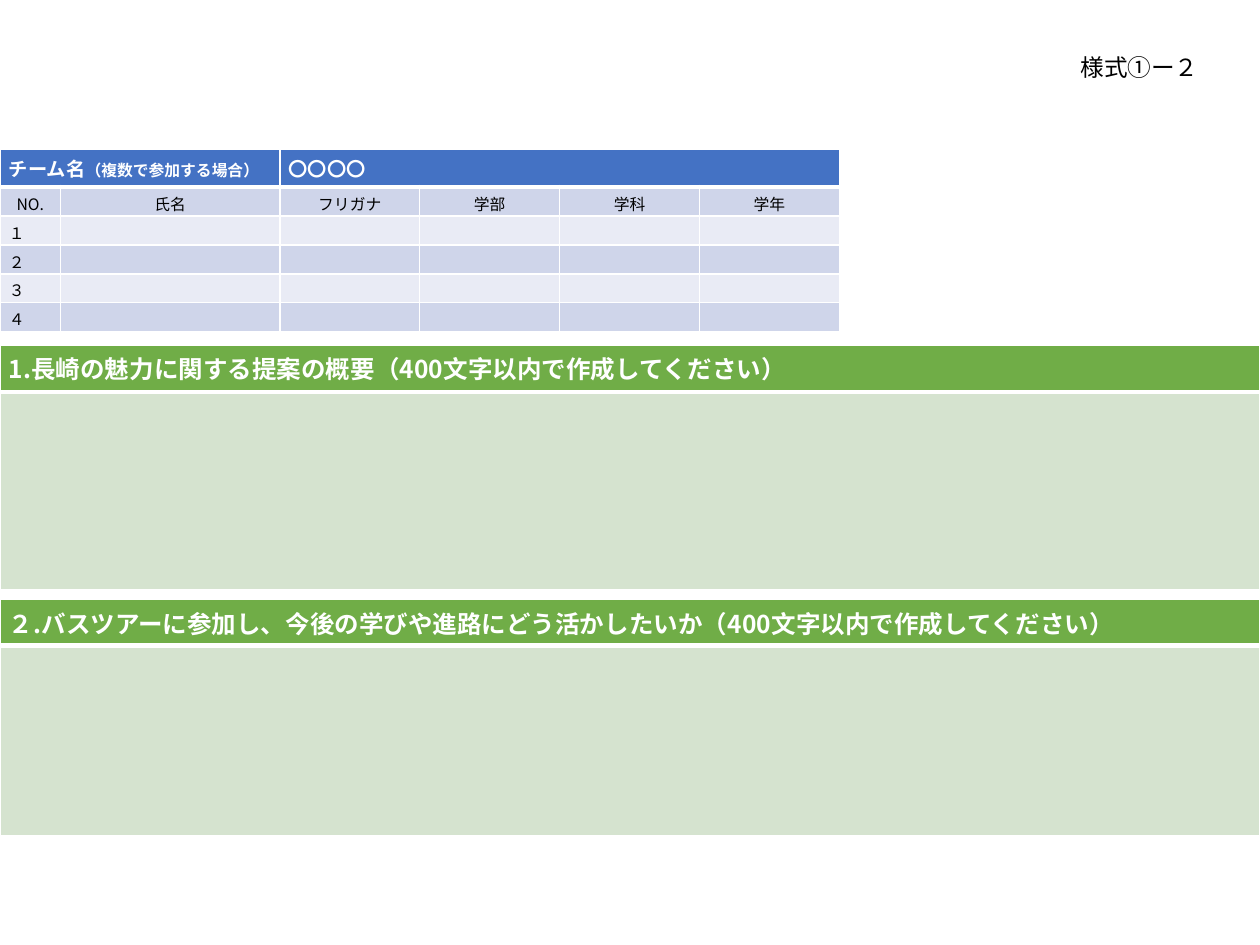
"""Build the team entry form slide with a member table and two answer tables."""
from pptx import Presentation
from pptx.dml.color import RGBColor
from pptx.enum.text import PP_ALIGN
from pptx.oxml.ns import qn
from pptx.util import Cm, Pt
from lxml.etree import SubElement

FONT = "Noto Sans CJK JP"
BLUE, BAND, LIGHT = "4472C4", "CFD5EA", "E9EBF5"
GREEN, PALE = "70AD47", "D5E3CF"


def write(p, text, size, color="000000", bold=False):
    """Add a formatted run to a paragraph."""
    r = p.add_run()
    r.text = text
    r.font.size = Pt(size)
    r.font.bold = bold
    r.font.name = FONT
    r.font.color.rgb = RGBColor.from_string(color)
    SubElement(r.font._element, qn("a:ea"), typeface=FONT)


def style_cell(cell, fill, bottom=1):
    """Set margins, white borders and fill, and return the first paragraph."""
    cell.margin_left = cell.margin_right = Cm(0.18)
    cell.margin_top = cell.margin_bottom = Cm(0.1)
    tcPr = cell._tc.get_or_add_tcPr()
    for side, width in (("L", 1), ("R", 1), ("T", 1), ("B", bottom)):
        ln = SubElement(tcPr, qn("a:ln" + side), w=str(Pt(width)))
        SubElement(SubElement(ln, qn("a:solidFill")), qn("a:srgbClr"), val="FFFFFF")
    cell.fill.solid()
    cell.fill.fore_color.rgb = RGBColor.from_string(fill)
    p = cell.text_frame.paragraphs[0]
    if not cell.is_spanned:
        SubElement(p._p, qn("a:endParaRPr"), sz="900")
    return p


prs = Presentation()
prs.slide_width, prs.slide_height = Cm(25.4), Cm(19.05)
s = prs.slides.add_slide(prs.slide_layouts[6])

sections = [
    (6.96, 0.94, 3.99, "1.長崎の魅力に関する提案の概要（400文字以内で作成してください）"),
    (12.09, 0.77, 3.84, "２.バスツアーに参加し、今後の学びや進路にどう活かしたいか（400文字以内で作成してください）"),
]
for top, head, body, heading in sections:
    tbl = s.shapes.add_table(2, 1, 0, Cm(top), Cm(25.4), Cm(head + body)).table
    tbl.rows[0].height, tbl.rows[1].height = Cm(head), Cm(body)
    write(style_cell(tbl.cell(0, 0), GREEN, 3), heading, 14, "FFFFFF", True)
    style_cell(tbl.cell(1, 0), PALE)

tf = s.shapes.add_textbox(Cm(21.54), Cm(0.94), Cm(3.3), Cm(0.84)).text_frame
tf.word_wrap = True
write(tf.paragraphs[0], "様式①ー２", 13.5)

widths = [1.22, 4.42] + [2.82] * 4
heights = [0.77] + [0.58] * 5
tbl = s.shapes.add_table(6, 6, 0, Cm(3), Cm(sum(widths)), Cm(sum(heights))).table
for col, width in zip(tbl.columns, widths):
    col.width = Cm(width)
for row, height in zip(tbl.rows, heights):
    row.height = Cm(height)
tbl.cell(0, 0).merge(tbl.cell(0, 1))
tbl.cell(0, 2).merge(tbl.cell(0, 5))

team = [style_cell(cell, BLUE, 3) for cell in tbl.rows[0].cells]
write(team[0], "チーム名", 11, "FFFFFF", True)
write(team[0], "（複数で参加する場合）", 9, "FFFFFF", True)
write(team[2], "〇〇〇〇", 11, "FFFFFF", True)

labels = ["NO.", "氏名", "フリガナ", "学部", "学科", "学年"]
for c, label in enumerate(labels):
    p = style_cell(tbl.cell(1, c), BAND)
    p.alignment = PP_ALIGN.CENTER
    write(p, label, 9)
for i, number in enumerate("１２３４", 2):
    cells = [style_cell(cell, BAND if i % 2 else LIGHT) for cell in tbl.rows[i].cells]
    write(cells[0], number, 9)

prs.save("out.pptx")
